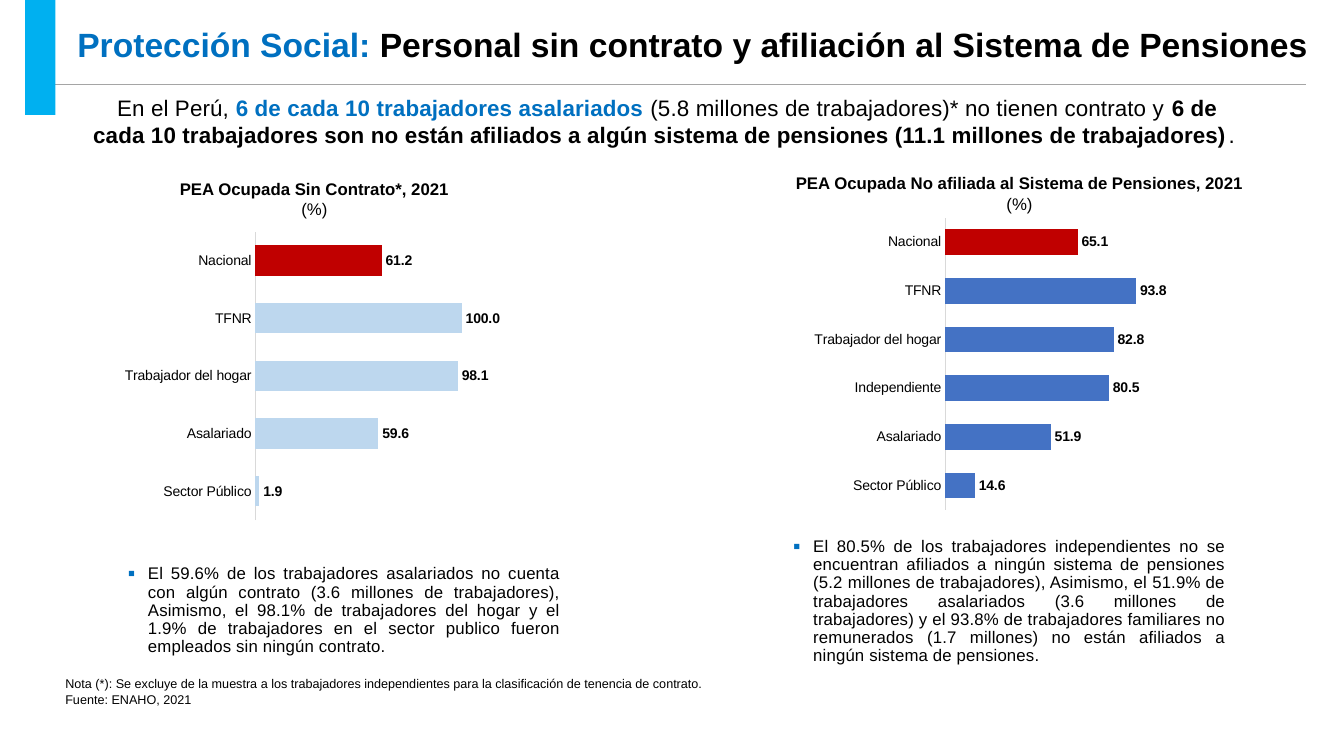
from lxml import etree
from pptx import Presentation, util as u
from pptx.chart.data import CategoryChartData
from pptx.dml.color import RGBColor
from pptx.enum import chart as ch, shapes, text
from pptx.oxml import parse_xml
from pptx.oxml.ns import nsdecls, qn

Pt = u.Pt


class Theme:
    font = "Arial"
    black, blue, cyan = "000000", "0070C0", "00B0F0"
    rule, axis = "A5A5A5", "D9D9D9"
    pale, mid, red = "BDD7EE", "4472C4", "C00000"
    title, lead, body, label, note = 24, 16, 12, 10, 9


def add_text(box, paras, size, align=None, wrap=True, track=None):
    """Each paragraph is a list of (words, colour, bold) runs."""
    left, top, width, height = box
    frame = deck.shapes.add_textbox(Pt(left), Pt(top), Pt(width), Pt(height)).text_frame
    frame.word_wrap = wrap
    for i, runs in enumerate(paras):
        para = frame.add_paragraph() if i else frame.paragraphs[0]
        para.alignment = align
        for words, color, bold in runs:
            run = para.add_run()
            run.text = words
            run.font.name, run.font.size, run.font.bold = Theme.font, Pt(size), bold
            run.font.color.rgb = RGBColor.from_string(color)
            if track:
                run.font._element.set("spc", str(track))
    return frame


def add_bars(box, plot, rows, top, color):
    """Bar chart from (name, value) rows; the last row is the national total."""
    data = CategoryChartData(number_format="0.0")
    data.categories = [name for name, _ in rows]
    data.add_series("Sin cobertura", [value for _, value in rows])
    chart = deck.shapes.add_chart(
        ch.XL_CHART_TYPE.BAR_CLUSTERED, *[Pt(n) for n in box], data).chart
    chart.has_legend = chart.has_title = False
    chart.font.name, chart.font.size = Theme.font, Pt(Theme.label)
    chart.font.color.rgb = RGBColor.from_string(Theme.black)

    scale = chart.value_axis
    scale.minimum_scale, scale.maximum_scale = 0, top
    scale.has_major_gridlines = scale.visible = False
    names = chart.category_axis
    names.major_tick_mark = ch.XL_TICK_MARK.NONE
    names.format.line.width = Pt(0.75)
    names.format.line.color.rgb = RGBColor.from_string(Theme.axis)

    bars = chart.plots[0]
    bars.gap_width, bars.vary_by_categories = 90, False
    series = bars.series[0]
    for shade, part in ((color, series), (Theme.red, series.points[len(rows) - 1])):
        part.format.fill.solid()
        part.format.fill.fore_color.rgb = RGBColor.from_string(shade)
    tags = series.data_labels
    tags.show_value = True
    tags.position = ch.XL_LABEL_POSITION.OUTSIDE_END
    tags.number_format, tags.number_format_is_linked = "0.0", False
    tags.font.name, tags.font.size, tags.font.bold = Theme.font, Pt(Theme.label), True
    tags.font.color.rgb = RGBColor.from_string(Theme.black)

    area = chart._chartSpace.chart.plotArea
    for old in area.findall(qn("c:layout")):
        area.remove(old)
    sizes = "".join(f'<c:{k} val="{v}"/>' for k, v in zip("xywh", plot))
    area.insert(0, parse_xml(
        f'<c:layout {nsdecls("c")}><c:manualLayout><c:layoutTarget val="inner"/>'
        f'<c:xMode val="edge"/><c:yMode val="edge"/>{sizes}</c:manualLayout></c:layout>'))


show = Presentation()
show.slide_width, show.slide_height = Pt(960), Pt(540)
deck = show.slides.add_slide(show.slide_layouts[6])
mid, just = text.PP_ALIGN.CENTER, text.PP_ALIGN.JUSTIFY

# Header
add_text((48.2, 13.7, 894, 36), [[
    ("Protección Social: ", Theme.blue, True),
    ("Personal sin contrato y afiliación al Sistema de Pensiones", Theme.black, True),
]], Theme.title)
rule = deck.shapes.add_connector(
    shapes.MSO_CONNECTOR.STRAIGHT, Pt(23), Pt(60.5), Pt(933), Pt(60.5))
rule.line.width = Pt(0.5)
rule.line.color.rgb = RGBColor.from_string(Theme.rule)
etree.SubElement(rule._element.spPr, qn("a:effectLst"))
tab = deck.shapes.add_shape(
    shapes.MSO_SHAPE.RECTANGLE, Pt(18), Pt(0), Pt(21.6), Pt(82))
tab.shadow.inherit = False
tab.fill.solid()
tab.fill.fore_color.rgb = RGBColor.from_string(Theme.cyan)
tab.line.fill.background()

lead = add_text((56, 64, 841, 46), [[
    ("En el Perú, ", Theme.black, False),
    ("6 de cada 10 trabajadores asalariados ", Theme.blue, True),
    ("(5.8 millones de trabajadores)* no tienen contrato y ", Theme.black, False),
    ("6 de cada 10 trabajadores son no están afiliados a algún sistema de pensiones "
     "(11.1 millones de trabajadores)", Theme.black, True),
    (". ", Theme.black, False),
]], Theme.lead, mid, track=10)
lead.paragraphs[0].space_after = Pt(2)

# Charts
add_bars((84.2, 161.3, 280.8, 214.6), (0.35, 0.02, 0.63, 0.96), [
    ("Sector Público", 1.9), ("Asalariado", 59.6), ("Trabajador del hogar", 98.1),
    ("TFNR", 100), ("Nacional", 61.2)], 120, Theme.pale)
add_bars((567.4, 144, 269.3, 231.8), (0.4, 0.05, 0.54, 0.9), [
    ("Sector Público", 14.6), ("Asalariado", 51.9), ("Independiente", 80.5),
    ("Trabajador del hogar", 82.8), ("TFNR", 93.8), ("Nacional", 65.1)], 100, Theme.mid)

for box, words in (
    ((120.2, 123.8, 208.8, 36), "PEA Ocupada Sin Contrato*, 2021"),
    ((559.4, 120.2, 337.7, 36), "PEA Ocupada No afiliada al Sistema de Pensiones, 2021"),
):
    add_text(box, [[(words, Theme.black, True)], [("(%)", Theme.black, False)]],
             Theme.body, mid, wrap=False)

# Findings
for box, words in (
    ((84.2, 400.3, 323.3, 68.4),
     "El 59.6% de los trabajadores asalariados no cuenta con algún contrato "
     "(3.6 millones de trabajadores), Asimismo, el 98.1% de trabajadores del hogar "
     "y el 1.9% de trabajadores en el sector publico fueron empleados sin ningún contrato."),
    ((559.4, 380.9, 323.3, 98.6),
     "El 80.5% de los trabajadores independientes no se encuentran afiliados a ningún "
     "sistema de pensiones (5.2 millones de trabajadores), Asimismo, el 51.9% de "
     "trabajadores asalariados (3.6 millones de trabajadores) y el 93.8% de trabajadores "
     "familiares no remunerados (1.7 millones) no están afiliados a ningún sistema de "
     "pensiones."),
):
    frame = add_text(box, [[(words, Theme.black, False)]], Theme.body, just, track=10)
    para = frame.paragraphs[0]
    para.line_spacing, para.space_before, para.space_after = 0.9, Pt(10), Pt(2)
    props = para._p.get_or_add_pPr()
    props.set("marL", str(Pt(14.4)))
    props.set("indent", str(-Pt(14.4)))
    tint = etree.SubElement(props, qn("a:buClr"))
    etree.SubElement(tint, qn("a:srgbClr"), val=Theme.blue)
    etree.SubElement(props, qn("a:buSzPct"), val="125000")
    etree.SubElement(props, qn("a:buFont"), typeface=Theme.font)
    etree.SubElement(props, qn("a:buChar"), char="▪")

# Notes
for box, words in (
    ((39.6, 479.5, 497.5, 18),
     "Nota (*): Se excluye de la muestra a los trabajadores independientes "
     "para la clasificación de tenencia de contrato."),
    ((39.6, 491, 164, 18), "Fuente: ENAHO, 2021"),
):
    add_text(box, [[(words, Theme.black, False)]], Theme.note)

show.save("out.pptx")
